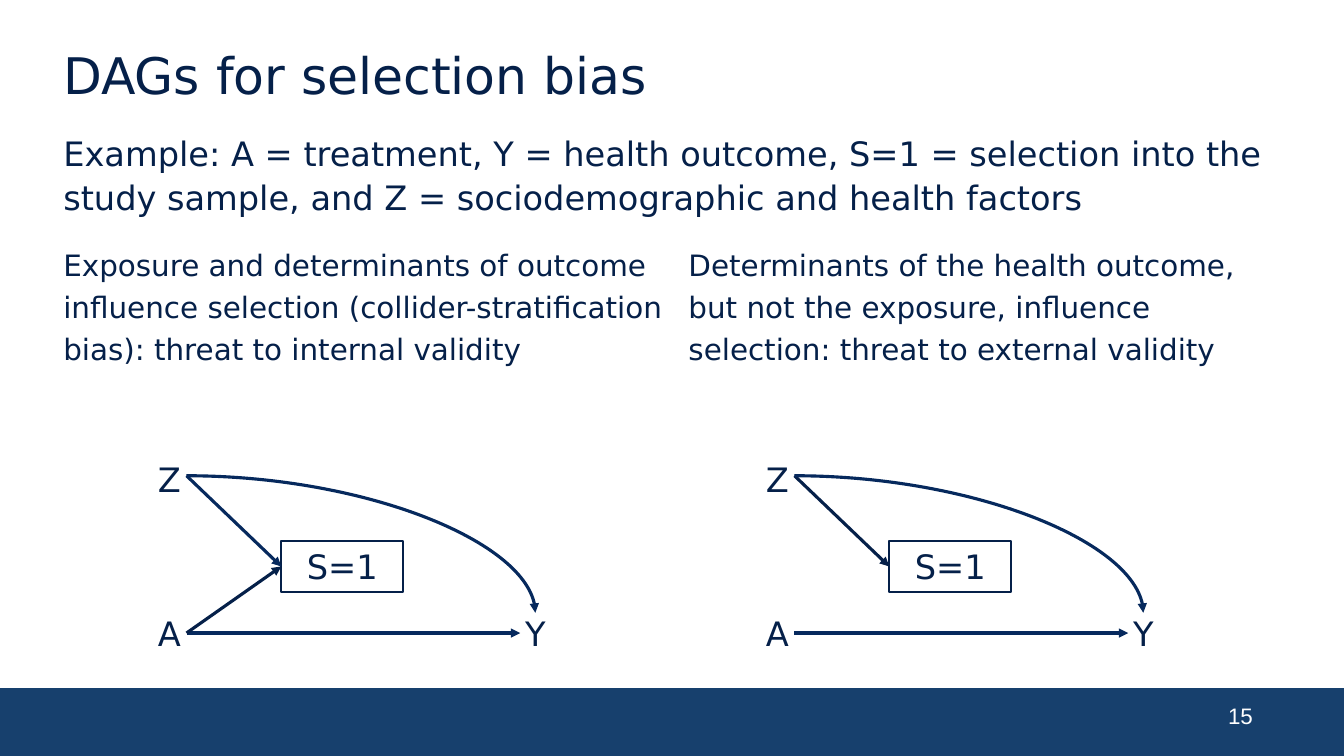
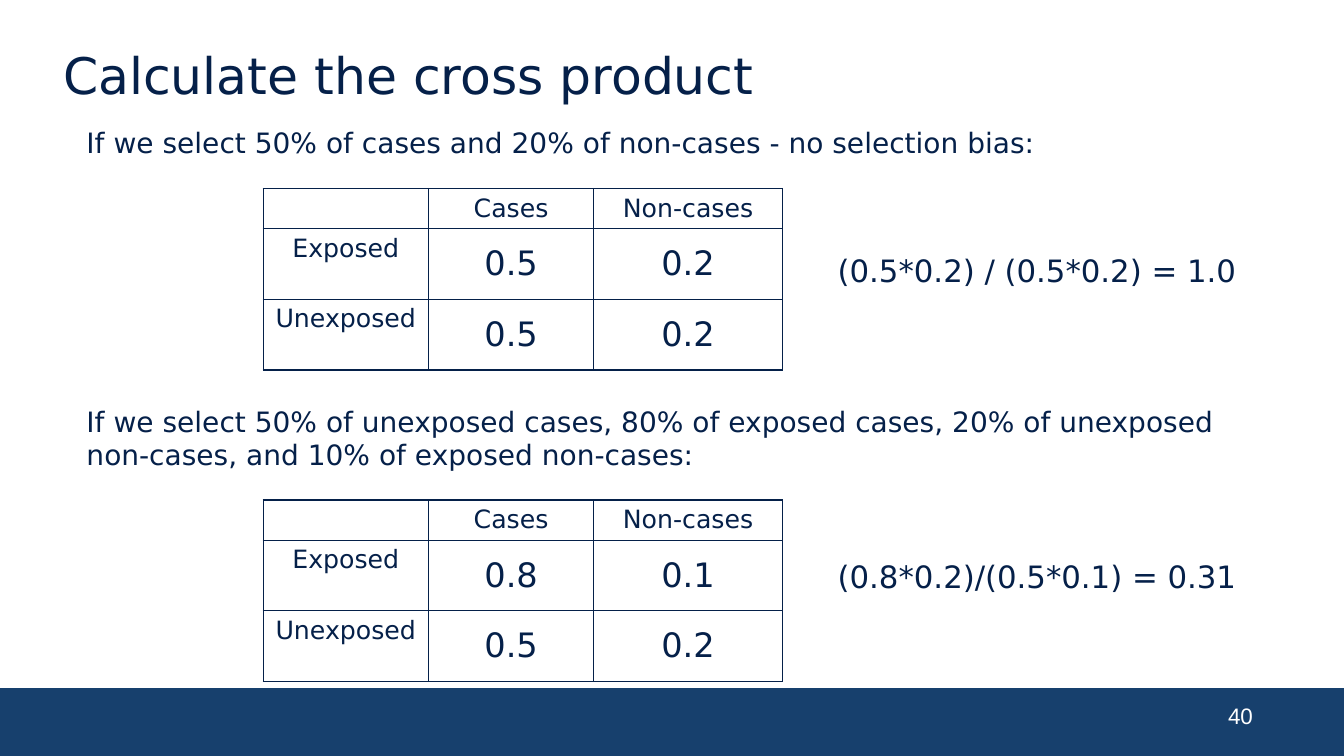
import pptx
import pptx.util
import pptx.dml.color
import pptx.enum.shapes
import pptx.enum.text
import pptx.oxml.ns
from lxml import etree

RGB = pptx.dml.color.RGBColor
INK = RGB(0x05, 0x20, 0x49)
NAVY = RGB(0x06, 0x29, 0x5D)
BAND = RGB(0x17, 0x40, 0x6D)
WHITE = RGB(0xFF, 0xFF, 0xFF)
FONT = "DejaVu Sans"
SCALE = 9144  # EMU in one px, 100 px to the inch
WIDE, HIGH = 1333, 750

SHAPE = pptx.enum.shapes.MSO_SHAPE
LINK = pptx.enum.shapes.MSO_CONNECTOR
ALIGN = pptx.enum.text.PP_ALIGN
ANCHOR = pptx.enum.text.MSO_ANCHOR
Pt = pptx.util.Pt
qn = pptx.oxml.ns.qn

# Slide 1: causal diagrams
INTRO = ("Example: A = treatment, Y = health outcome, S=1 = selection into the "
         "study sample, and Z = sociodemographic and health factors")
NOTES = [
    ((53, 233, 614, 180), "Exposure and determinants of outcome influence selection "
     "(collider-stratification bias): threat to internal validity"),
    ((673, 233, 575, 133), "Determinants of the health outcome, but not the exposure, "
     "influence selection: threat to external validity"),
]
# Positions across are counted from the left edge of each diagram
NODES = [("A", (0, 608, 34, 40), 1), ("Z", (0, 451, 34, 41), 1.11),
         ("Y", (365, 608, 30, 40), 1)]
SAMPLE = (128, 537, 121, 50)
ARROWS = {
    "A-Y": (34, 628, 365, 628),
    "Z-S": (34, 472, 128, 562),
    "A-S": (34, 628, 128, 562),
    "Z-Y": (34, 472, 380, 608),
}
GRAPHS = [
    (151, {"A-Y": NAVY, "A-S": INK, "Z-S": NAVY, "Z-Y": NAVY}),
    (754, {"A-Y": NAVY, "Z-S": INK, "Z-Y": NAVY}),
]

# Slide 2: selection tables
HEADS = ["", "Cases", "Non-cases"]
COLS = [164, 164, 187]
ROWS = [40, 70, 70]
CASES = [
    {"text": "If we select 50% of cases and 20% of non-cases - no selection bias:",
     "box": (76, 120, 1064, 44), "top": 187,
     "rows": [["Exposed", "0.5", "0.2"], ["Unexposed", "0.5", "0.2"]],
     "sum": "(0.5*0.2) / (0.5*0.2) = 1.0", "sum_top": 245},
    {"text": "If we select 50% of unexposed cases, 80% of exposed cases, 20% of "
             "unexposed non-cases, and 10% of exposed non-cases:",
     "box": (76, 396, 1207, 77), "top": 496,
     "rows": [["Exposed", "0.8", "0.1"], ["Unexposed", "0.5", "0.2"]],
     "sum": "(0.8*0.2)/(0.5*0.1) = 0.31", "sum_top": 548},
]


def emu(nums):
    return [n * SCALE for n in nums]


def write(frame, text, size, color=INK, font=FONT, align=ALIGN.LEFT, space=1):
    para = frame.paragraphs[0]
    para.alignment = align
    para.line_spacing = space
    run = para.add_run()
    run.text = text
    run.font.size = Pt(size)
    run.font.name = font
    run.font.color.rgb = color


def setup(frame, anchor, tight):
    frame.word_wrap = True
    frame.vertical_anchor = anchor
    if tight:
        frame.margin_left = frame.margin_right = 0
        frame.margin_top = frame.margin_bottom = 0


def label(slide, box, text, size, anchor=ANCHOR.TOP, tight=False, **style):
    frame = slide.shapes.add_textbox(*emu(box)).text_frame
    setup(frame, anchor, tight)
    write(frame, text, size, **style)


def rect(slide, box, fill, line):
    shape = slide.shapes.add_shape(SHAPE.RECTANGLE, *emu(box))
    shape.shadow.inherit = False
    if fill is None:
        shape.fill.background()
    else:
        shape.fill.solid()
        shape.fill.fore_color.rgb = fill
    shape.line.color.rgb = line
    shape.line.width = Pt(1.5)
    return shape


def arrow(slide, ends, color, curved):
    kind = LINK.CURVE if curved else LINK.STRAIGHT
    link = slide.shapes.add_connector(kind, *emu(ends))
    link.line.color.rgb = color
    link.line.width = Pt(2.25)
    props = link._element.spPr
    etree.SubElement(props.find(qn("a:ln")), qn("a:tailEnd"), type="triangle")
    etree.SubElement(props, qn("a:effectLst"))
    if curved:
        props.find(qn("a:prstGeom")).set("prst", "curvedConnector2")


def border(cell):
    props = cell._tc.get_or_add_tcPr()
    for side in "LRTB":
        line = etree.SubElement(props, qn("a:ln" + side), w=str(Pt(1)))
        fill = etree.SubElement(line, qn("a:solidFill"))
        etree.SubElement(fill, qn("a:srgbClr"), val=str(INK))


def grid(slide, left, top, rows):
    box = (left, top, sum(COLS), sum(ROWS))
    table = slide.shapes.add_table(len(ROWS), len(COLS), *emu(box)).table
    table.first_row = table.horz_banding = False
    for col, width in zip(table.columns, emu(COLS)):
        col.width = width
    for row, height in zip(table.rows, emu(ROWS)):
        row.height = height
    for r, row in enumerate([HEADS] + rows):
        for c, text in enumerate(row):
            cell = table.cell(r, c)
            border(cell)
            cell.fill.background()
            side = r > 0 and c == 0
            cell.vertical_anchor = ANCHOR.TOP if side else ANCHOR.MIDDLE
            if text:
                size = 24 if r and c else 18
                write(cell.text_frame, text, size, align=ALIGN.CENTER)


def graph(slide, left, arrows):
    for text, (x, y, w, h), space in NODES:
        label(slide, (left + x, y, w, h), text, 24, tight=True,
              align=ALIGN.CENTER, space=space)
    x, y, w, h = SAMPLE
    frame = rect(slide, (left + x, y, w, h), None, INK).text_frame
    setup(frame, ANCHOR.MIDDLE, True)
    write(frame, "S=1", 24, align=ALIGN.CENTER)
    for name, color in arrows.items():
        x1, y1, x2, y2 = ARROWS[name]
        arrow(slide, (left + x1, y1, left + x2, y2), color, name == "Z-Y")


def start(deck, title, number):
    """Add a slide with the shared band, title and page number."""
    slide = deck.slides.add_slide(deck.slide_layouts[6])
    rect(slide, (0, 684, WIDE, 66), BAND, BAND)
    label(slide, (53, 48, 1227, 62), title, 36, space=0.85)
    label(slide, (1218, 706, 62, 17), number, 16, ANCHOR.BOTTOM, True,
          color=WHITE, font="Arial")
    return slide


def main():
    deck = pptx.Presentation()
    deck.slide_width, deck.slide_height = emu((WIDE, HIGH))

    # Diagrams
    slide = start(deck, "DAGs for selection bias", "15")
    label(slide, (53, 123, 1227, 100), INTRO, 24, space=1.1)
    for box, text in NOTES:
        label(slide, box, text, 21, space=1.2)
    for left, arrows in GRAPHS:
        graph(slide, left, arrows)

    # Tables
    slide = start(deck, "Calculate the cross product", "40")
    for case in CASES:
        label(slide, case["box"], case["text"], 20)
        grid(slide, 261, case["top"], case["rows"])
        label(slide, (821, case["sum_top"], 472, 47), case["sum"], 22)

    deck.save("out.pptx")


if __name__ == "__main__":
    main()
